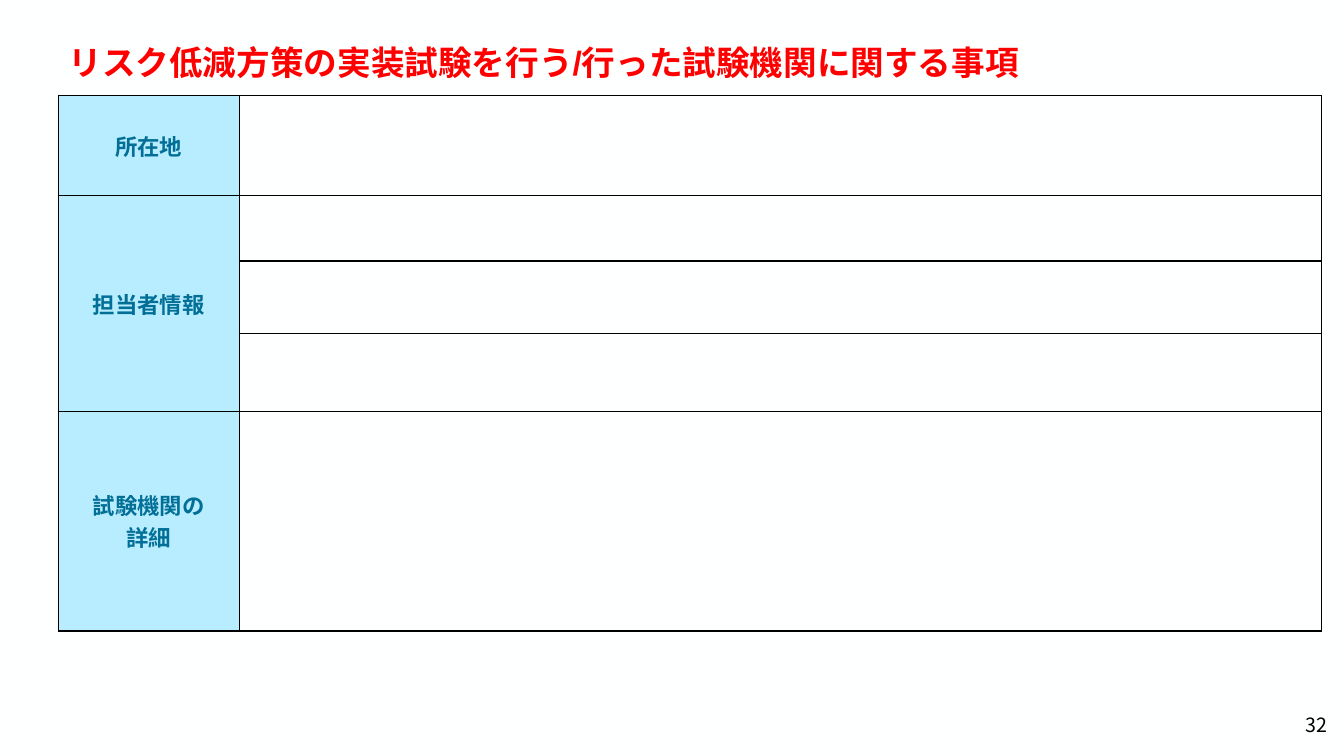
from dataclasses import dataclass

from pptx import Presentation
from pptx.dml.color import RGBColor as Color
from pptx.enum.text import MSO_ANCHOR as Anchor, MSO_AUTO_SIZE as AutoSize, PP_ALIGN as Align
from pptx.oxml.ns import qn
from pptx.util import Pt
from lxml.etree import SubElement


@dataclass(frozen=True)
class Theme:
    background: str = "FEFFFF"
    title: str = "FF0000"
    label: str = "016F96"
    label_fill: str = "B8ECFF"
    ink: str = "000000"
    title_size: int = 24
    label_size: int = 16
    number_size: int = 14
    border_width: int = 1
    title_font: str = "Arial"
    label_font: str = "Calibri"
    japanese_font: str = "Noto Sans CJK JP"


class FormSlide:
    """Draws the parts of a form slide in one theme."""

    def __init__(self, presentation, theme):
        self.theme = theme
        self.slide = presentation.slides.add_slide(presentation.slide_layouts[5])
        fill = self.slide.background.fill
        fill.solid()
        fill.fore_color.rgb = Color.from_string(theme.background)

    def add_text(self, paragraph, text, font_name, size, color, align, bold=False):
        paragraph.alignment = align
        run = paragraph.add_run()
        run.text = text
        font = run.font
        font.name, font.size, font.bold = font_name, Pt(size), bold
        font.color.rgb = Color.from_string(color)
        east_asian = SubElement(run._r.get_or_add_rPr(), qn("a:ea"))
        east_asian.set("typeface", self.theme.japanese_font)

    def place_title(self, text, left, top, width, height):
        title = self.slide.shapes.title
        title.left, title.top, title.width, title.height = map(Pt, (left, top, width, height))
        frame = title.text_frame
        frame.word_wrap = False
        frame.auto_size = AutoSize.NONE
        frame.vertical_anchor = Anchor.MIDDLE
        theme = self.theme
        self.add_text(frame.paragraphs[0], text, theme.title_font, theme.title_size,
                      theme.title, Align.LEFT, bold=True)

    def add_page_number(self, text, left, top, width, height):
        box = self.slide.shapes.add_textbox(*map(Pt, (left, top, width, height)))
        frame = box.text_frame
        frame.word_wrap = False
        frame.vertical_anchor = Anchor.MIDDLE
        frame.margin_left = frame.margin_top = 0
        frame.margin_right = frame.margin_bottom = Pt(11.5)
        theme = self.theme
        self.add_text(frame.paragraphs[0], text, theme.japanese_font, theme.number_size,
                      theme.ink, Align.RIGHT)

    def add_borders(self, cell):
        properties = cell._tc.get_or_add_tcPr()
        for side in ("lnL", "lnR", "lnT", "lnB"):
            line = SubElement(properties, qn(f"a:{side}"), w=str(Pt(self.theme.border_width)))
            solid = SubElement(line, qn("a:solidFill"))
            SubElement(solid, qn("a:srgbClr"), val=self.theme.ink)

    def fill_label(self, cell, lines):
        theme = self.theme
        cell.fill.solid()
        cell.fill.fore_color.rgb = Color.from_string(theme.label_fill)
        cell.vertical_anchor = Anchor.MIDDLE
        frame = cell.text_frame
        for index, line in enumerate(lines):
            paragraph = frame.add_paragraph() if index else frame.paragraphs[0]
            self.add_text(paragraph, line, theme.label_font, theme.label_size,
                          theme.label, Align.CENTER, bold=True)

    def add_form(self, left, top, column_widths, sections):
        heights = [height for _, row_heights in sections for height in row_heights]
        frame = self.slide.shapes.add_table(
            len(heights), len(column_widths), Pt(left), Pt(top),
            Pt(sum(column_widths)), Pt(sum(heights)))
        table = frame.table
        table.first_row = table.horz_banding = False
        for column, width in zip(table.columns, column_widths):
            column.width = Pt(width)
        for row, height in zip(table.rows, heights):
            row.height = Pt(height)
        for cell in table.iter_cells():
            self.add_borders(cell)
            cell.fill.background()
        first = 0
        for lines, row_heights in sections:
            last = first + len(row_heights) - 1
            label = table.cell(first, 0)
            if last > first:
                label.merge(table.cell(last, 0))
            self.fill_label(label, lines)
            first = last + 1


def main():
    presentation = Presentation()
    presentation.slide_width, presentation.slide_height = Pt(960), Pt(540)
    form = FormSlide(presentation, Theme())
    form.add_form(41.8, 68.4, (129, 773.2), [
        (["所在地"], [71.3]),
        (["担当者情報"], [46.8, 51.8, 55.4]),
        (["試験機関の", "詳細"], [157]),
    ])
    form.add_page_number("32", 918.7, 506.9, 41, 33.1)
    form.place_title("リスク低減方策の実装試験を行う/行った試験機関に関する事項",
                     41.8, 26.6, 707.8, 36)
    presentation.save("out.pptx")


if __name__ == "__main__":
    main()
